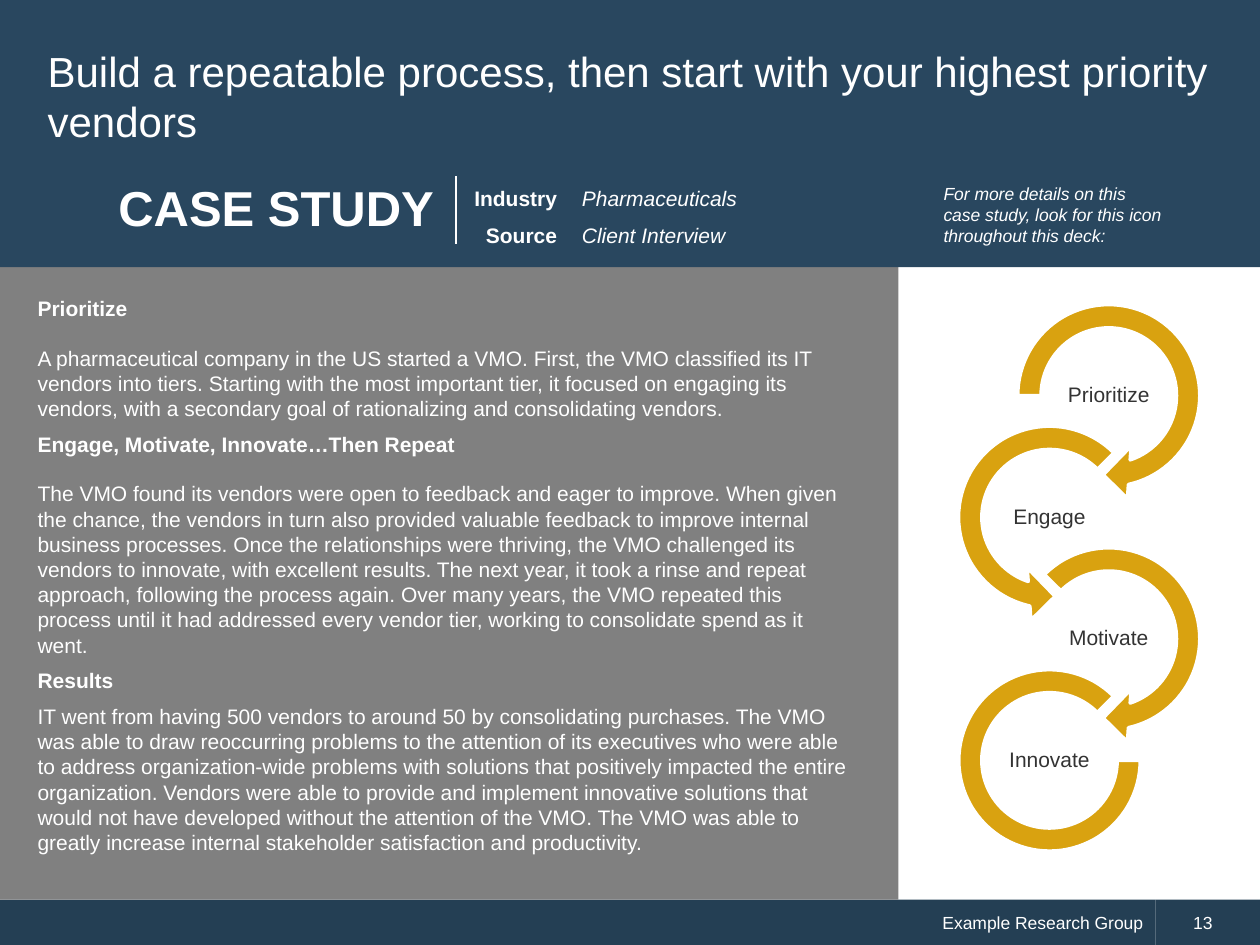
from dataclasses import dataclass

from lxml import etree
from pptx import Presentation
from pptx.dml.color import RGBColor
from pptx.enum.shapes import MSO_CONNECTOR, MSO_SHAPE
from pptx.enum.text import MSO_ANCHOR, PP_ALIGN
from pptx.oxml.ns import qn
from pptx.util import Inches, Pt

RECTANGLE = MSO_SHAPE.RECTANGLE
ARC_RIGHT = MSO_SHAPE.CIRCULAR_ARROW
ARC_LEFT = MSO_SHAPE.LEFT_CIRCULAR_ARROW
ARC_END = MSO_SHAPE.BLOCK_ARC
STRAIGHT = MSO_CONNECTOR.STRAIGHT
TOP, MIDDLE = MSO_ANCHOR.TOP, MSO_ANCHOR.MIDDLE
LEFT, CENTER, RIGHT = PP_ALIGN.LEFT, PP_ALIGN.CENTER, PP_ALIGN.RIGHT

COLORS = {
    "white": "FFFFFF",
    "header": "29475F",
    "footer": "243F54",
    "panel": "808080",
    "arc": "D9A210",
    "label": "333333",
}
FONT = "Arial"
SLIDE_WIDTH, SLIDE_HEIGHT = Inches(10), Inches(7.5)
COLUMN, ROW = SLIDE_WIDTH / 100, SLIDE_HEIGHT / 75


@dataclass(frozen=True)
class Box:
    column: float
    row: float
    columns: float
    rows: float

    def lengths(self) -> tuple[int, int, int, int]:
        return (round(self.column * COLUMN), round(self.row * ROW),
                round(self.columns * COLUMN), round(self.rows * ROW))


@dataclass(frozen=True)
class Style:
    size: float = 12
    color: str = "white"
    bold: bool = False
    italic: bool = False
    align: PP_ALIGN = LEFT
    anchor: MSO_ANCHOR = TOP
    line_spacing: float = 1.0
    margins: tuple[float, float, float, float] = (0.1, 0.05, 0.1, 0.05)


@dataclass(frozen=True)
class Section:
    heading: str
    body: str
    gap: float


@dataclass(frozen=True)
class Step:
    label: str
    shape_type: MSO_SHAPE
    adjustments: tuple[float, ...]
    center: float
    size: float


SECTIONS = [
    Section(
        "Prioritize",
        "A pharmaceutical company in the US started a VMO. First, the VMO classified its IT "
        "vendors into tiers. Starting with the most important tier, it focused on engaging its "
        "vendors, with a secondary goal of rationalizing and consolidating vendors.",
        13.8),
    Section(
        "Engage, Motivate, Innovate…Then Repeat",
        "The VMO found its vendors were open to feedback and eager to improve. When given the "
        "chance, the vendors in turn also provided valuable feedback to improve internal business "
        "processes. Once the relationships were thriving, the VMO challenged its vendors to "
        "innovate, with excellent results. The next year, it took a rinse and repeat approach, "
        "following the process again. Over many years, the VMO repeated this process until it had "
        "addressed every vendor tier, working to consolidate spend as it went.",
        13.8),
    Section(
        "Results",
        "IT went from having 500 vendors to around 50 by consolidating purchases. The VMO was able "
        "to draw reoccurring problems to the attention of its executives who were able to address "
        "organization-wide problems with solutions that positively impacted the entire "
        "organization. Vendors were able to provide and implement innovative solutions that would "
        "not have developed without the attention of the VMO. The VMO was able to greatly increase "
        "internal stakeholder satisfaction and productivity.",
        6),
]
STEPS = [
    Step("Prioritize", ARC_RIGHT, (0.11, 11.42, 45, 108, 0.125), 88, 16.8),
    Step("Engage", ARC_LEFT, (0.11, 11.42, 63, 189, 0.125), 83.3, 16.8),
    Step("Motivate", ARC_RIGHT, (0.11, 11.42, 45, 135, 0.125), 88, 16.8),
    Step("Innovate", ARC_END, (0, 189, 0.127), 83.3, 14.4),
]
FIRST_STEP_ROW, STEP_PITCH = 31.4, 9.65
LABEL_COLUMNS, LABEL_ROWS = 9.4, 4.7


def rgb(name: str) -> RGBColor:
    return RGBColor.from_string(COLORS[name])


def write(shape, lines: list[str], style: Style) -> None:
    frame = shape.text_frame
    frame.text = "\n".join(lines)
    frame.word_wrap = True
    frame.vertical_anchor = style.anchor
    frame.margin_left, frame.margin_top, frame.margin_right, frame.margin_bottom = map(
        Inches, style.margins)
    for paragraph in frame.paragraphs:
        paragraph.alignment = style.align
        paragraph.line_spacing = style.line_spacing
        for run in paragraph.runs:
            run.font.name = FONT
            run.font.size = Pt(style.size)
            run.font.bold = style.bold
            run.font.italic = style.italic
            run.font.color.rgb = rgb(style.color)


def add_block(slide, box: Box, fill: str, shape_type: MSO_SHAPE = RECTANGLE):
    shape = slide.shapes.add_shape(shape_type, *box.lengths())
    shape.shadow.inherit = False
    shape.fill.solid()
    shape.fill.fore_color.rgb = rgb(fill)
    shape.line.fill.background()
    return shape


def add_text(slide, box: Box, lines: list[str], style: Style):
    shape = slide.shapes.add_textbox(*box.lengths())
    write(shape, lines, style)
    return shape


def add_step(slide, step: Step, row: float) -> None:
    half = step.size / 2
    arc = add_block(slide, Box(step.center - half, row - half, step.size, step.size),
                    "arc", step.shape_type)
    for index, value in enumerate(step.adjustments):
        arc.adjustments[index] = value
    arc.line.color.rgb = rgb("white")
    arc.line.width = Pt(2)
    label_box = Box(step.center - LABEL_COLUMNS / 2, row - LABEL_ROWS / 2,
                    LABEL_COLUMNS, LABEL_ROWS)
    add_text(slide, label_box, [step.label],
             Style(color="label", align=CENTER, anchor=MIDDLE, line_spacing=0.9,
                   margins=(0.01, 0.01, 0.01, 0.01)))


def add_story(slide, box: Box, sections: list[Section]) -> None:
    lines = [line for section in sections for line in (section.heading, section.body)]
    story = add_text(slide, box, lines, Style())
    paragraphs = story.text_frame.paragraphs
    for index, section in enumerate(sections):
        heading = paragraphs[2 * index]
        heading.runs[0].font.bold = True
        heading.space_before = Pt(6 if index else 0)
        heading.space_after = Pt(section.gap)


def add_divider(slide, column: float, top: float, bottom: float) -> None:
    left, start, _, height = Box(column, top, 0, bottom - top).lengths()
    divider = slide.shapes.add_connector(STRAIGHT, left, start, left, start + height)
    divider.line.color.rgb = rgb("white")
    divider.line.width = Pt(0.75)
    etree.SubElement(divider._element.spPr, qn("a:effectLst"))


def main() -> None:
    presentation = Presentation()
    presentation.slide_width, presentation.slide_height = SLIDE_WIDTH, SLIDE_HEIGHT
    slide = presentation.slides.add_slide(presentation.slide_layouts[6])

    write(add_block(slide, Box(0, 71.4, 91.7, 3.7), "footer"), ["Example Research Group"],
          Style(size=10, align=RIGHT, anchor=MIDDLE))
    write(add_block(slide, Box(91.7, 71.4, 8.3, 3.7), "footer"), ["13"],
          Style(size=10, anchor=MIDDLE, margins=(0.3, 0.05, 0.1, 0.05)))
    add_block(slide, Box(0, 0, 100, 12.3), "header")

    for index, step in enumerate(STEPS):
        add_step(slide, step, FIRST_STEP_ROW + index * STEP_PITCH)

    add_block(slide, Box(0, 21.2, 71.3, 50.2), "panel")
    add_story(slide, Box(2, 23, 67.2, 43.9), SECTIONS)

    write(add_block(slide, Box(0, 11.7, 100, 9.5), "header"), ["CASE STUDY"],
          Style(size=28, bold=True, anchor=MIDDLE, margins=(0.94, 0.05, 0.1, 0.05)))
    add_text(slide, Box(35.7, 13.2, 9.5, 7.1), ["Industry", "Source"],
             Style(bold=True, align=RIGHT, line_spacing=1.5))
    add_divider(slide, 36.2, 14, 19.4)
    add_text(slide, Box(45.2, 13.2, 40.9, 7.1), ["Pharmaceuticals", "Client Interview"],
             Style(italic=True, line_spacing=1.5))
    add_text(slide, Box(73.9, 14, 19.3, 6.1),
             ["For more details on this case study, look for this icon throughout this deck:"],
             Style(size=10, italic=True))
    add_text(slide, Box(2.8, 2.8, 94.3, 9.6),
             ["Build a repeatable process, then start with your highest priority vendors"],
             Style(size=24, anchor=MIDDLE))
    presentation.save("out.pptx")


if __name__ == "__main__":
    main()
